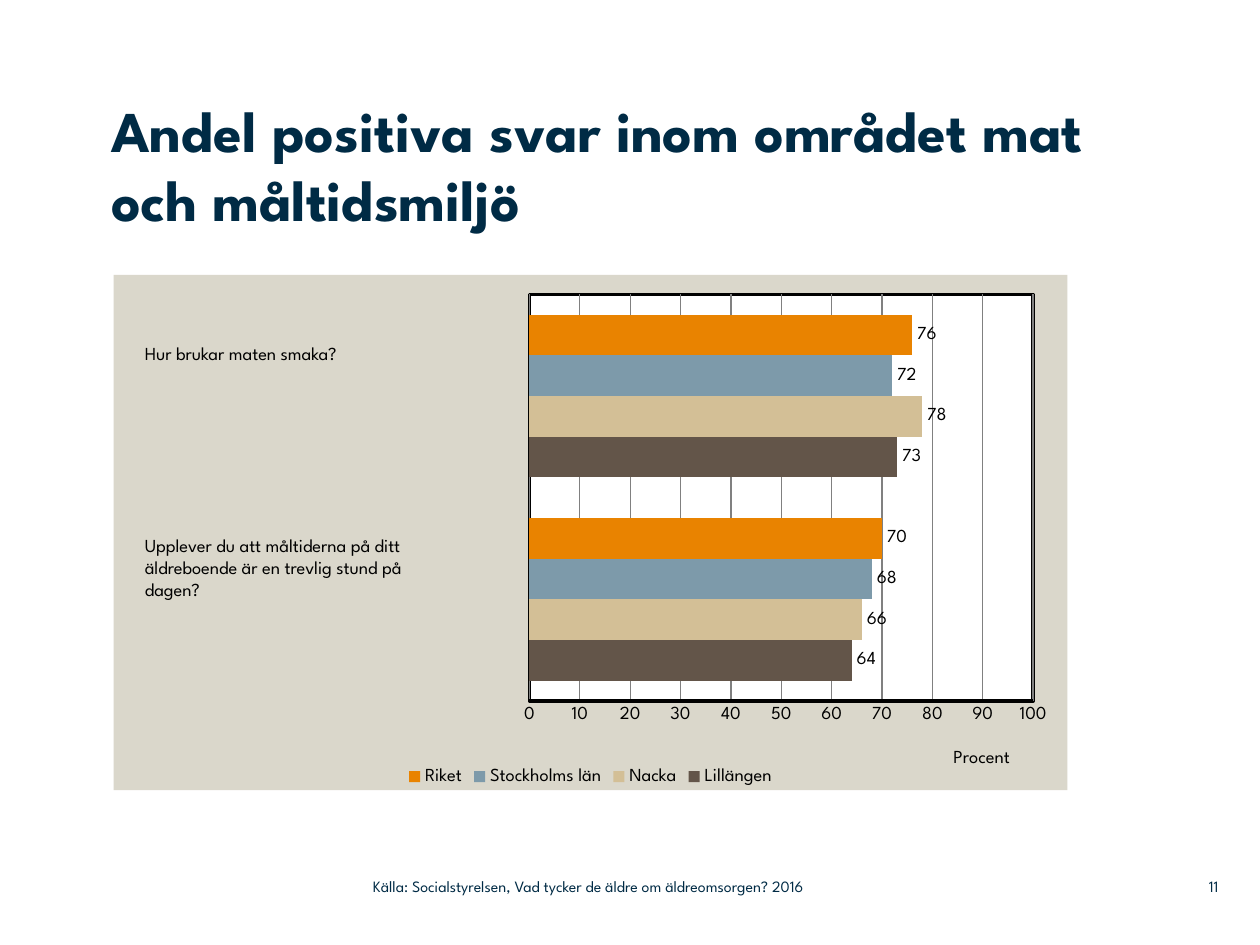
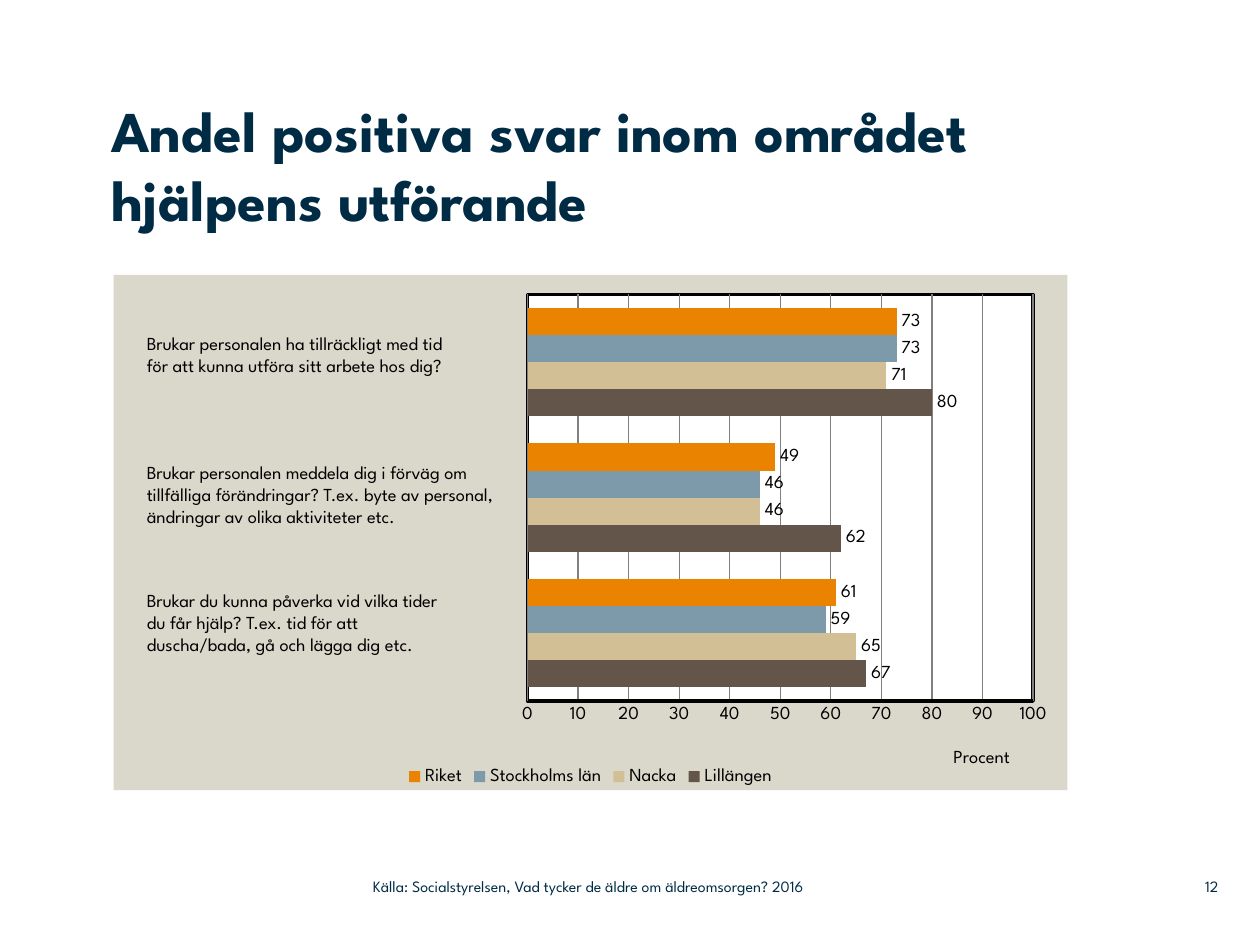
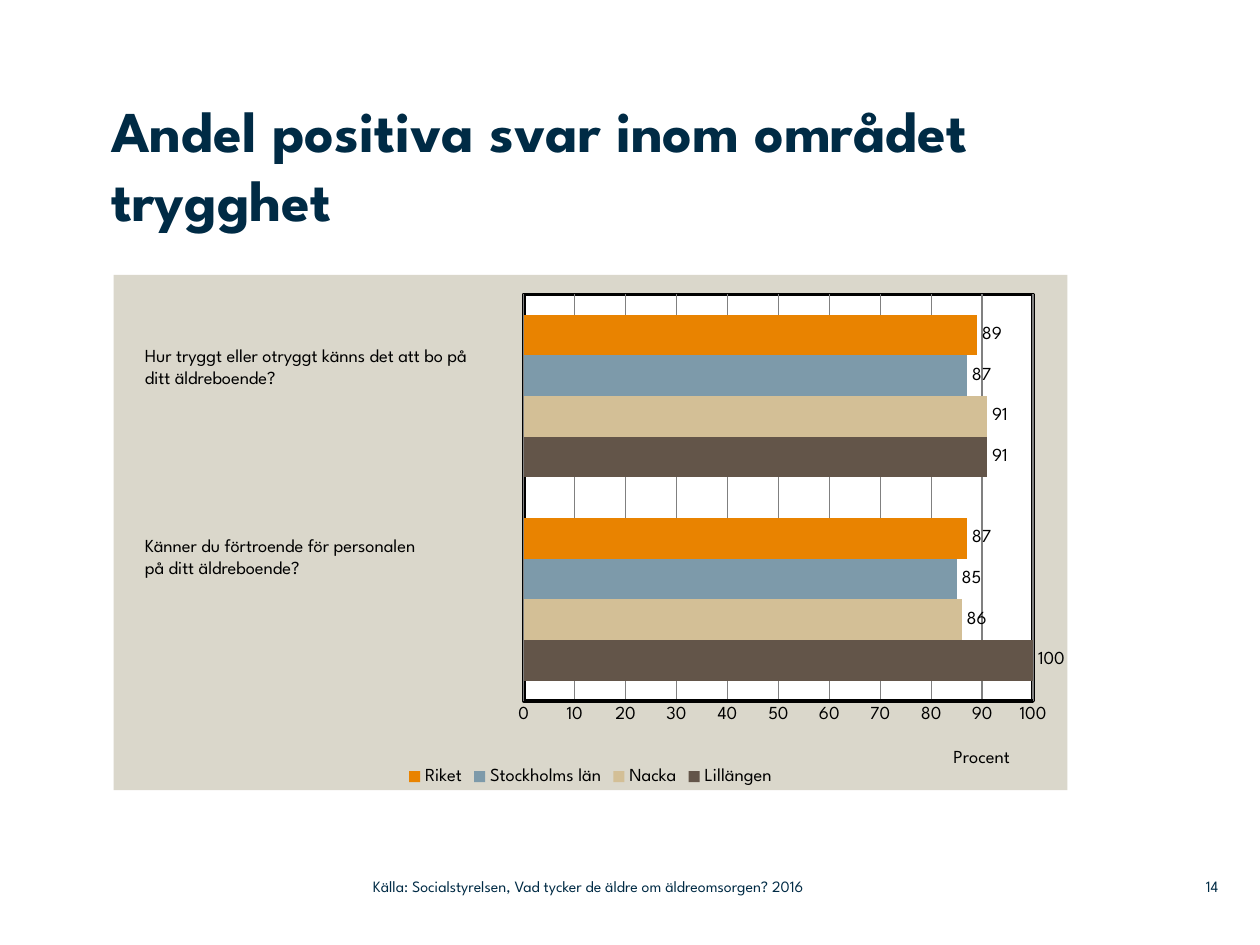
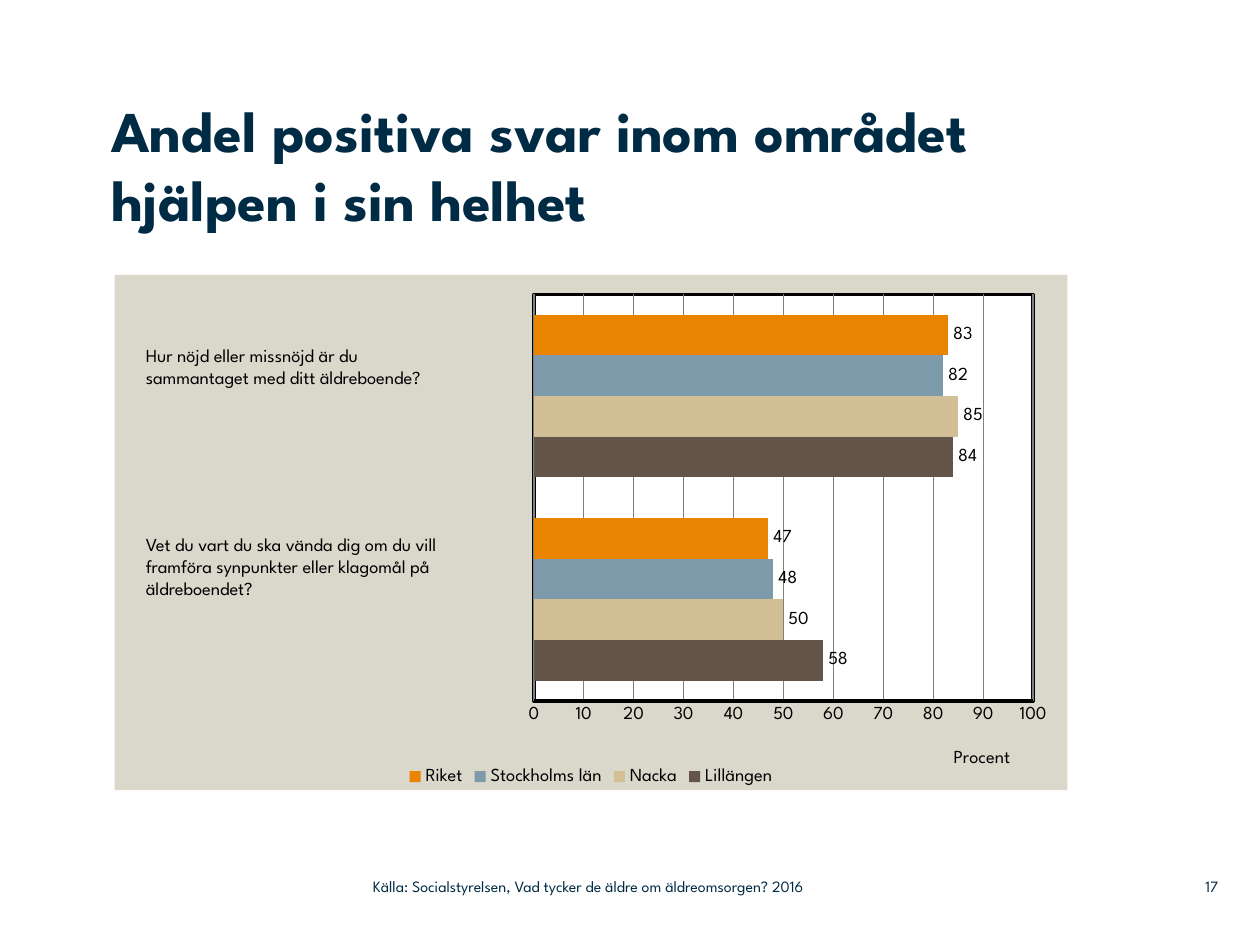
import dataclasses

import pptx
import pptx.chart.data
import pptx.dml.color
import pptx.enum.chart
import pptx.enum.text
import pptx.oxml
import pptx.oxml.ns
import pptx.util

Cm = pptx.util.Cm
Pt = pptx.util.Pt

SOURCE = "Källa: Socialstyrelsen, Vad tycker de äldre om äldreomsorgen? 2016"
TITLE_START = "Andel positiva svar inom området "
TITLE_ONLY_LAYOUT = 5
CHART_RIGHT = 21.52
QUESTION_WIDTH = 7.52
PLOT_RIGHT = 0.964


@dataclasses.dataclass(frozen=True)
class Theme:
    font: str = "League Spartan"
    navy: str = "002B45"
    black: str = "000000"
    white: str = "FFFFFF"
    panel: str = "DAD7CB"
    grid: str = "808080"
    title_size: float = 33
    body_size: float = 10.5
    footer_size: float = 9


THEME = Theme()

SERIES_COLORS = {
    "Lillängen": "635549",
    "Nacka": "D3BF96",
    "Stockholms län": "7D9AAA",
    "Riket": "E98300",
}


@dataclasses.dataclass(frozen=True)
class Question:
    top: float
    lines: int
    paragraphs: tuple


@dataclasses.dataclass(frozen=True)
class Survey:
    """One slide; results hold a row per series, from the bottom question up."""
    number: int
    area: str
    results: tuple
    questions: tuple
    plot_left: float
    question_left: float = 2.67
    chart_left: float = 2.29
    title_width: float = 19.3


SURVEYS = (
    Survey(
        11, "mat och måltidsmiljö",
        ((64, 73), (66, 78), (68, 72), (70, 76)),
        (
            Question(6.78, 1, ("Hur brukar maten smaka?",)),
            Question(10.64, 3, (
                "Upplever du att måltiderna på ditt äldreboende är en trevlig stund på",
                "dagen?")),
        ),
        plot_left=0.436, title_width=21.39,
    ),
    Survey(
        12, "hjälpens utförande",
        ((67, 62, 80), (65, 46, 71), (59, 46, 73), (61, 49, 73)),
        (
            Question(6.58, 2, (
                "Brukar personalen ha tillräckligt med tid",
                "för att kunna utföra sitt arbete hos dig?")),
            Question(9.17, 3, (
                "Brukar personalen meddela dig i förväg om tillfälliga förändringar? "
                "T.ex. byte av personal, ändringar av olika aktiviteter etc.",)),
            Question(11.75, 3, (
                "Brukar du kunna påverka vid vilka tider",
                "du får hjälp? T.ex. tid för att",
                "duscha/bada, gå och lägga dig etc.")),
        ),
        plot_left=0.434, question_left=2.71,
    ),
    Survey(
        14, "trygghet",
        ((100, 91), (86, 91), (85, 87), (87, 89)),
        (
            Question(6.81, 2, (
                "Hur tryggt eller otryggt känns det att bo på ditt äldreboende?",)),
            Question(10.64, 2, (
                "Känner du förtroende för personalen",
                "på ditt äldreboende?")),
        ),
        plot_left=0.43,
    ),
    Survey(
        17, "hjälpen i sin helhet",
        ((58, 84), (50, 85), (48, 82), (47, 83)),
        (
            Question(6.81, 2, (
                "Hur nöjd eller missnöjd är du",
                "sammantaget med ditt äldreboende?")),
            Question(10.62, 3, (
                "Vet du vart du ska vända dig om du vill framföra synpunkter "
                "eller klagomål på äldreboendet?",)),
        ),
        plot_left=0.44, question_left=2.69, chart_left=2.31,
    ),
)


def rgb(color):
    return pptx.dml.color.RGBColor.from_string(color)


def style_font(font, size, color, bold=False):
    font.name = THEME.font
    font.size = Pt(size)
    font.bold = bold
    font.color.rgb = rgb(color)


def write_paragraph(paragraph, text, size, color, bold=False):
    run = paragraph.add_run()
    run.text = text
    style_font(run.font, size, color, bold)


def clear_margins(frame):
    frame.margin_left = frame.margin_right = 0
    frame.margin_top = frame.margin_bottom = 0


def add_title(slide, text, width):
    title = slide.shapes.title
    title.left, title.top = Cm(2.24), Cm(1.91)
    title.width, title.height = Cm(width), Cm(3.61)
    frame = title.text_frame
    clear_margins(frame)
    frame.auto_size = pptx.enum.text.MSO_AUTO_SIZE.NONE
    frame.vertical_anchor = pptx.enum.text.MSO_ANCHOR.TOP
    paragraph = frame.paragraphs[0]
    paragraph.alignment = pptx.enum.text.PP_ALIGN.LEFT
    write_paragraph(paragraph, text, THEME.title_size, THEME.navy, bold=True)


def add_question(slide, question, left):
    height = 0.25 + 0.45 * question.lines
    box = slide.shapes.add_textbox(
        Cm(left), Cm(question.top), Cm(QUESTION_WIDTH), Cm(height))
    frame = box.text_frame
    frame.word_wrap = True
    frame.auto_size = pptx.enum.text.MSO_AUTO_SIZE.SHAPE_TO_FIT_TEXT
    for index, text in enumerate(question.paragraphs):
        paragraph = frame.add_paragraph() if index else frame.paragraphs[0]
        write_paragraph(paragraph, text, THEME.body_size, THEME.black)


def add_footer_text(slide, text, left, width, alignment):
    box = slide.shapes.add_textbox(Cm(left), Cm(17.5), Cm(width), Cm(0.74))
    frame = box.text_frame
    frame.word_wrap = True
    frame.vertical_anchor = pptx.enum.text.MSO_ANCHOR.MIDDLE
    clear_margins(frame)
    paragraph = frame.paragraphs[0]
    paragraph.alignment = alignment
    write_paragraph(paragraph, text, THEME.footer_size, THEME.navy)


def add_footer(slide, number):
    align = pptx.enum.text.PP_ALIGN
    add_footer_text(slide, str(number), 23.37, 1.19, align.RIGHT)
    add_footer_text(slide, SOURCE, 7.52, 11.25, align.LEFT)


def area_properties(fill, line=""):
    """Return a c:spPr element with a solid fill and the given a:ln content."""
    return pptx.oxml.parse_xml(
        f'<c:spPr {pptx.oxml.ns.nsdecls("c", "a")}>'
        f'<a:solidFill><a:srgbClr val="{fill}"/></a:solidFill>'
        f'<a:ln w="{Pt(2)}">{line or "<a:noFill/>"}</a:ln></c:spPr>')


def manual_layout(x, y, width=None, height=None):
    """Return a c:layout; with a size it places the inner plot area."""
    target = '<c:layoutTarget val="inner"/>' if width else ""
    size = f'<c:w val="{width:.3f}"/><c:h val="{height}"/>' if width else ""
    return pptx.oxml.parse_xml(
        f'<c:layout {pptx.oxml.ns.nsdecls("c")}><c:manualLayout>{target}'
        f'<c:xMode val="edge"/><c:yMode val="edge"/>'
        f'<c:x val="{x}"/><c:y val="{y}"/>{size}</c:manualLayout></c:layout>')


def replace_layout(parent, layout, predecessor=None):
    for old in parent.findall(pptx.oxml.ns.qn("c:layout")):
        parent.remove(old)
    if predecessor is None:
        parent.insert(0, layout)
    else:
        predecessor.addnext(layout)


def style_value_axis(axis):
    axis.minimum_scale, axis.maximum_scale, axis.major_unit = 0, 100, 10
    axis.major_tick_mark = pptx.enum.chart.XL_TICK_MARK.NONE
    axis.minor_tick_mark = pptx.enum.chart.XL_TICK_MARK.NONE
    axis.format.line.color.rgb = rgb(THEME.black)
    axis.format.line.width = Pt(2)
    axis.has_major_gridlines = True
    grid_line = axis.major_gridlines.format.line
    grid_line.color.rgb = rgb(THEME.grid)
    grid_line.width = Pt(0.75)
    style_font(axis.tick_labels.font, THEME.body_size, THEME.black)

    title = axis.axis_title
    write_paragraph(title.text_frame.paragraphs[0], "Procent",
                    THEME.body_size, THEME.black)
    text = title._element.find(pptx.oxml.ns.qn("c:tx"))
    replace_layout(title._element, manual_layout(0.877, 0.912), text)


def style_bars(plot):
    plot.gap_width = 100
    plot.overlap = 0
    plot.vary_by_categories = False
    for series in plot.series:
        series.format.fill.solid()
        series.format.fill.fore_color.rgb = rgb(SERIES_COLORS[series.name])
        series.format.line.fill.background()
        labels = series.data_labels
        labels.show_value = True
        labels.position = pptx.enum.chart.XL_LABEL_POSITION.OUTSIDE_END
        style_font(labels.font, THEME.body_size, THEME.black)


def style_areas(chart, plot_left):
    """Fill the panel and the framed plot area, and place the plot area."""
    chart_element = chart.element.find(pptx.oxml.ns.qn("c:chart"))
    chart_element.addnext(area_properties(THEME.panel))
    plot_area = chart_element.find(pptx.oxml.ns.qn("c:plotArea"))
    replace_layout(plot_area, manual_layout(
        plot_left, 0.038, PLOT_RIGHT - plot_left, 0.789))
    border = f'<a:solidFill><a:srgbClr val="{THEME.black}"/></a:solidFill>'
    plot_area.append(area_properties(THEME.white, border))


def add_result_chart(slide, survey):
    data = pptx.chart.data.CategoryChartData()
    data.categories = [str(i + 1) for i in range(len(survey.questions))]
    for name, values in zip(SERIES_COLORS, survey.results):
        data.add_series(name, values)
    chart = slide.shapes.add_chart(
        pptx.enum.chart.XL_CHART_TYPE.BAR_CLUSTERED,
        Cm(survey.chart_left), Cm(5.54),
        Cm(CHART_RIGHT - survey.chart_left), Cm(10.39), data).chart
    chart.has_title = False
    style_font(chart.font, THEME.body_size, THEME.black)
    chart.category_axis.visible = False
    style_value_axis(chart.value_axis)
    style_bars(chart.plots[0])
    chart.has_legend = True
    chart.legend.position = pptx.enum.chart.XL_LEGEND_POSITION.BOTTOM
    chart.legend.include_in_layout = False
    style_font(chart.legend.font, THEME.body_size, THEME.black)
    style_areas(chart, survey.plot_left)


def add_survey_slide(presentation, survey):
    layout = presentation.slide_layouts[TITLE_ONLY_LAYOUT]
    slide = presentation.slides.add_slide(layout)
    add_result_chart(slide, survey)
    add_title(slide, TITLE_START + survey.area, survey.title_width)
    for question in survey.questions:
        add_question(slide, question, survey.question_left)
    add_footer(slide, survey.number)


def main():
    presentation = pptx.Presentation()
    presentation.slide_width = Cm(25.4)
    presentation.slide_height = Cm(19.05)
    for survey in SURVEYS:
        add_survey_slide(presentation, survey)
    presentation.save("out.pptx")


if __name__ == "__main__":
    main()
